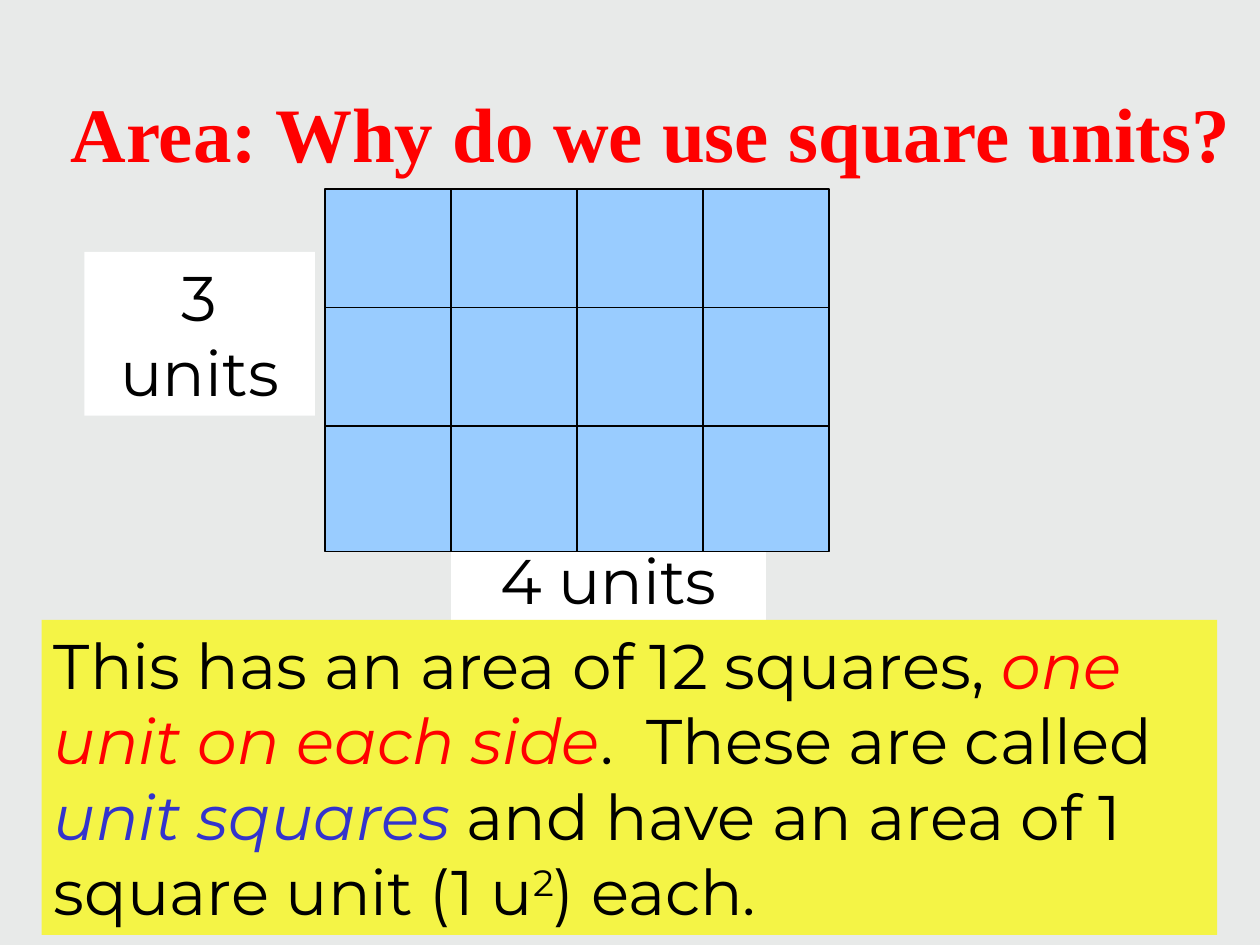
from lxml.etree import SubElement
from pptx import Presentation
from pptx.dml.color import RGBColor
from pptx.enum.shapes import MSO_CONNECTOR, MSO_SHAPE
from pptx.enum.text import MSO_ANCHOR, PP_ALIGN
from pptx.oxml.ns import qn
from pptx.util import Inches, Pt

COLORS = {
    "background": "E8EAE9",
    "black": "000000",
    "white": "FFFFFF",
    "red": "FF0000",
    "blue": "3333CC",
    "square": "99CCFF",
    "yellow": "F4F446",
}


def color(name):
    return RGBColor.from_string(COLORS[name])


def add_span(para, text, font="Montserrat", size=36, fill="black",
             bold=False, italic=False, superscript=False):
    span = para.add_run()
    span.text = text
    span.font.name = font
    span.font.size = Pt(size)
    span.font.bold = bold
    span.font.italic = italic
    span.font.color.rgb = color(fill)
    if superscript:
        span._r.get_or_add_rPr().set("baseline", "30000")


class SlideBuilder:
    def __init__(self, page, line_width=0.75):
        self.page = page
        self.line_width = Pt(line_width)
        page.background.fill.solid()
        page.background.fill.fore_color.rgb = color("background")

    def fill_text(self, box, spans, align, anchor):
        """Fill a box with one paragraph made of (text, format) pairs."""
        frame = box.text_frame
        frame.word_wrap = True
        frame.vertical_anchor = anchor
        para = frame.paragraphs[0]
        para.alignment = align
        for text, style in spans:
            add_span(para, text, **style)

    def title(self, left, top, width, height, text, **style):
        box = self.page.shapes.add_textbox(
            Inches(left), Inches(top), Inches(width), Inches(height))
        self.fill_text(box, [(text, style)], PP_ALIGN.CENTER, MSO_ANCHOR.MIDDLE)

    def rectangle(self, left, top, width, height, fill, outline=None):
        box = self.page.shapes.add_shape(
            MSO_SHAPE.RECTANGLE,
            Inches(left), Inches(top), Inches(width), Inches(height))
        box.shadow.inherit = False
        box.fill.solid()
        box.fill.fore_color.rgb = color(fill)
        if outline:
            box.line.color.rgb = color(outline)
            box.line.width = self.line_width
        else:
            box.line.fill.background()
        return box

    def panel(self, left, top, width, height, fill, spans, align=PP_ALIGN.CENTER):
        box = self.rectangle(left, top, width, height, fill)
        self.fill_text(box, spans, align, MSO_ANCHOR.TOP)

    def line(self, x1, y1, x2, y2):
        line = self.page.shapes.add_connector(
            MSO_CONNECTOR.STRAIGHT,
            Inches(x1), Inches(y1), Inches(x2), Inches(y2))
        line.line.color.rgb = color("black")
        line.line.width = self.line_width
        SubElement(line._element.spPr, qn("a:effectLst"))

    def unit_grid(self, left, top, columns, row_heights, unit=1):
        width, height = columns * unit, sum(row_heights)
        self.rectangle(left, top, width, height, "square", "black")
        for row in range(1, len(row_heights)):
            y = top + sum(row_heights[:row])
            self.line(left, y, left + width, y)
        for column in range(1, columns):
            x = left + column * unit
            self.line(x, top, x, top + height)


def main():
    deck = Presentation()
    deck.slide_width, deck.slide_height = Inches(10), Inches(7.5)
    builder = SlideBuilder(deck.slides.add_slide(deck.slide_layouts[6]))

    builder.title(0.33, 0.42, 9.67, 1.25, "Area: Why do we use square units?",
                  font="Times New Roman", size=44, fill="red", bold=True)
    builder.panel(0.67, 2, 1.83, 1.3, "white", [("3 units", {})])
    builder.panel(3.58, 4.25, 2.5, 0.7, "white", [("4 units", {})])
    builder.unit_grid(2.58, 1.5, columns=4, row_heights=[0.94, 0.94, 1])
    builder.panel(0.33, 4.92, 9.33, 2.5, "yellow", [
        ("This has an area of 12 squares, ", {}),
        ("one unit on each side", {"fill": "red", "italic": True}),
        (".  These are called ", {}),
        ("unit squares", {"fill": "blue", "italic": True}),
        (" and have an area of 1 square unit (1 u", {}),
        ("2", {"superscript": True}),
        (") each.", {}),
    ], align=PP_ALIGN.LEFT)

    deck.save("out.pptx")


if __name__ == "__main__":
    main()
